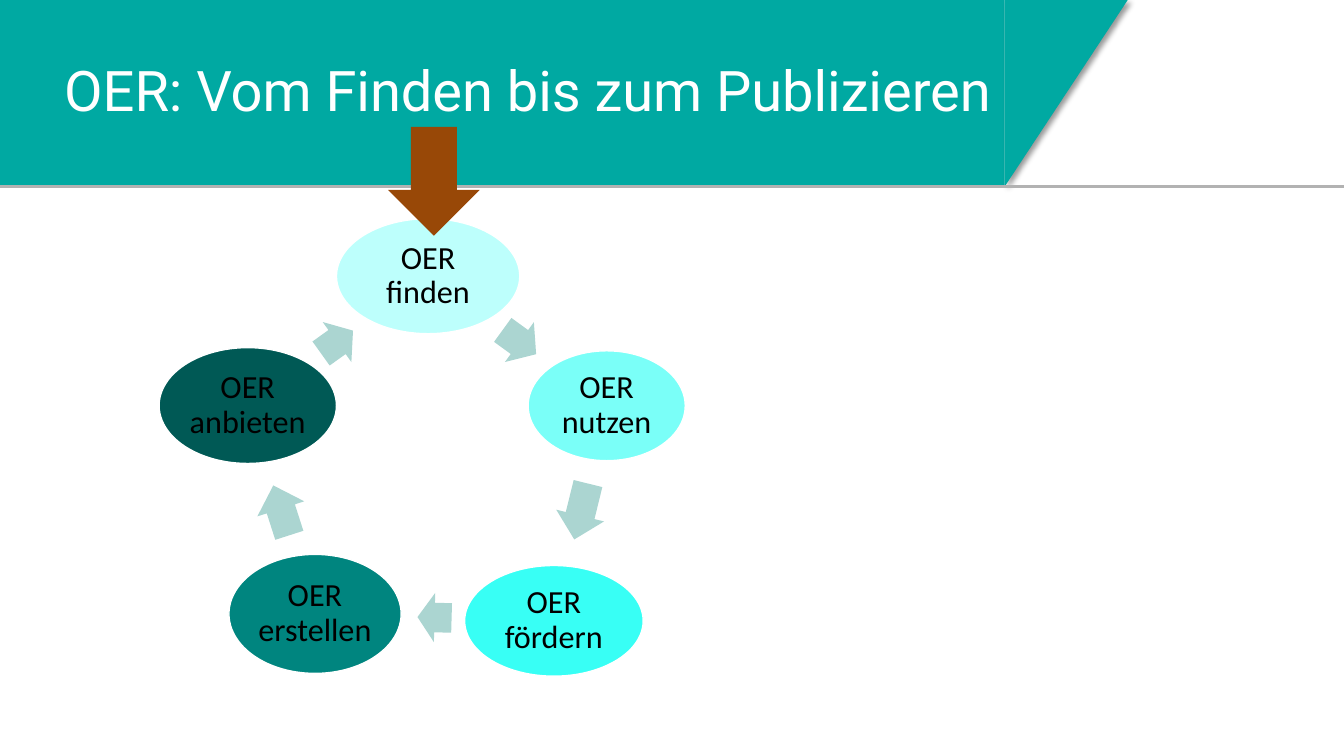
from lxml import etree
from pptx import Presentation
from pptx.dml.color import RGBColor
from pptx.enum.shapes import MSO_CONNECTOR, MSO_SHAPE
from pptx.enum.text import MSO_ANCHOR, PP_ALIGN
from pptx.oxml import parse_xml
from pptx.oxml.ns import nsdecls, qn
from pptx.util import Cm, Pt

TEAL = RGBColor(0x00, 0xA9, 0xA2)
GREY = RGBColor(0xB2, 0xB2, 0xB2)
PALE_TEAL = RGBColor(0xAB, 0xD5, 0xD1)
BROWN = RGBColor(0x98, 0x48, 0x07)
WHITE = RGBColor(0xFF, 0xFF, 0xFF)
BLACK = RGBColor(0x00, 0x00, 0x00)

SLIDE_W, SLIDE_H = 33.87, 19.05
HEADER_W, HEADER_H = 25.32, 4.7
SLANT_W = 3.1
ARROW_H = 1.24

# Step text, fill, left, top, width, height
STEPS = [
    ("OER finden", RGBColor(0xBD, 0xFF, 0xFC), 8.48, 5.51, 4.62, 2.9),
    ("OER nutzen", RGBColor(0x7A, 0xFF, 0xF8), 13.31, 8.84, 3.96, 2.77),
    ("OER fördern", RGBColor(0x38, 0xFF, 0xF5), 11.71, 14.25, 4.5, 2.79),
    ("OER erstellen", RGBColor(0x00, 0x85, 0x7F), 5.77, 13.97, 4.34, 3),
    ("OER anbieten", RGBColor(0x00, 0x59, 0x55), 4.01, 8.76, 4.47, 2.92),
]
# Left, top, width, rotation of the arrow that follows each step
ARROWS = [
    (12.57, 8, 1.04, 36),
    (13.92, 12.27, 1.45, 103.8),
    (10.52, 14.94, 0.86, 181.6),
    (6.43, 12.24, 1.32, 252.2),
    (8, 8, 0.99, 324.4),
]


def add_filled(shapes, kind, color, left, top, width, height, rotation=0):
    sp = shapes.add_shape(kind, Cm(left), Cm(top), Cm(width), Cm(height))
    sp.shadow.inherit = False
    sp.fill.solid()
    sp.fill.fore_color.rgb = color
    sp.line.fill.background()
    sp.rotation = rotation
    return sp


def write_text(sp, text, font, size, color, align):
    """Set one vertically centred paragraph with tight line spacing."""
    tf = sp.text_frame
    tf.word_wrap = True
    tf.vertical_anchor = MSO_ANCHOR.MIDDLE
    p = tf.paragraphs[0]
    p.alignment = align
    p.line_spacing = 0.9
    r = p.add_run()
    r.text = text
    r.font.name = font
    r.font.size = Pt(size)
    r.font.color.rgb = color


def cast_shadow(sp):
    """Give the shape a soft shadow towards the lower right."""
    effects = sp._element.spPr.find(qn("a:effectLst"))
    effects.append(parse_xml(
        f'<a:outerShdw {nsdecls("a")} blurRad="50800" dist="38100" '
        'dir="2700000" algn="tl" rotWithShape="0">'
        '<a:srgbClr val="000000"><a:alpha val="40000"/></a:srgbClr>'
        '</a:outerShdw>'))


def add_header(shapes):
    add_filled(shapes, MSO_SHAPE.RECTANGLE, TEAL, 0, 0, HEADER_W, HEADER_H)
    # The triangle is turned by 90°, so its width and height change places
    shift = (HEADER_H - SLANT_W) / 2
    slant = add_filled(shapes, MSO_SHAPE.RIGHT_TRIANGLE, TEAL,
                       HEADER_W - shift, shift, HEADER_H, SLANT_W, 90)
    cast_shadow(slant)
    rule = shapes.add_connector(MSO_CONNECTOR.STRAIGHT, Cm(SLIDE_W),
                                Cm(HEADER_H), Cm(0), Cm(HEADER_H))
    rule.line.color.rgb = GREY
    rule.line.width = Pt(2.25)
    etree.SubElement(rule._element.spPr, qn("a:effectLst"))
    title = shapes.add_textbox(Cm(1.37), Cm(0.51), Cm(25.53), Cm(3.68))
    write_text(title, "OER: Vom Finden bis zum Publizieren",
               "Roboto", 40, WHITE, PP_ALIGN.LEFT)


def add_step(shapes, text, color, *box):
    sp = add_filled(shapes, MSO_SHAPE.OVAL, color, *box)
    sp.line.color.rgb = WHITE
    sp.line.width = Pt(1)
    tf = sp.text_frame
    tf.margin_left = tf.margin_right = Cm(0.05)
    tf.margin_top = tf.margin_bottom = Cm(0.05)
    write_text(sp, text, "Calibri", 23, BLACK, PP_ALIGN.CENTER)


def add_cycle(shapes):
    cycle = shapes.add_group_shape().shapes
    for step, (left, top, width, rotation) in zip(STEPS, ARROWS):
        add_step(cycle, *step)
        arrow = add_filled(cycle, MSO_SHAPE.RIGHT_ARROW, PALE_TEAL,
                           left, top, width, ARROW_H, rotation)
        arrow.adjustments[0] = 0.6
        arrow.adjustments[1] = 0.5


def main():
    prs = Presentation()
    prs.slide_width, prs.slide_height = Cm(SLIDE_W), Cm(SLIDE_H)
    s = prs.slides.add_slide(prs.slide_layouts[6])
    add_header(s.shapes)
    add_cycle(s.shapes)
    add_filled(s.shapes, MSO_SHAPE.DOWN_ARROW, BROWN, 9.78, 3.2, 2.31, 2.74)
    prs.save("out.pptx")


if __name__ == "__main__":
    main()
